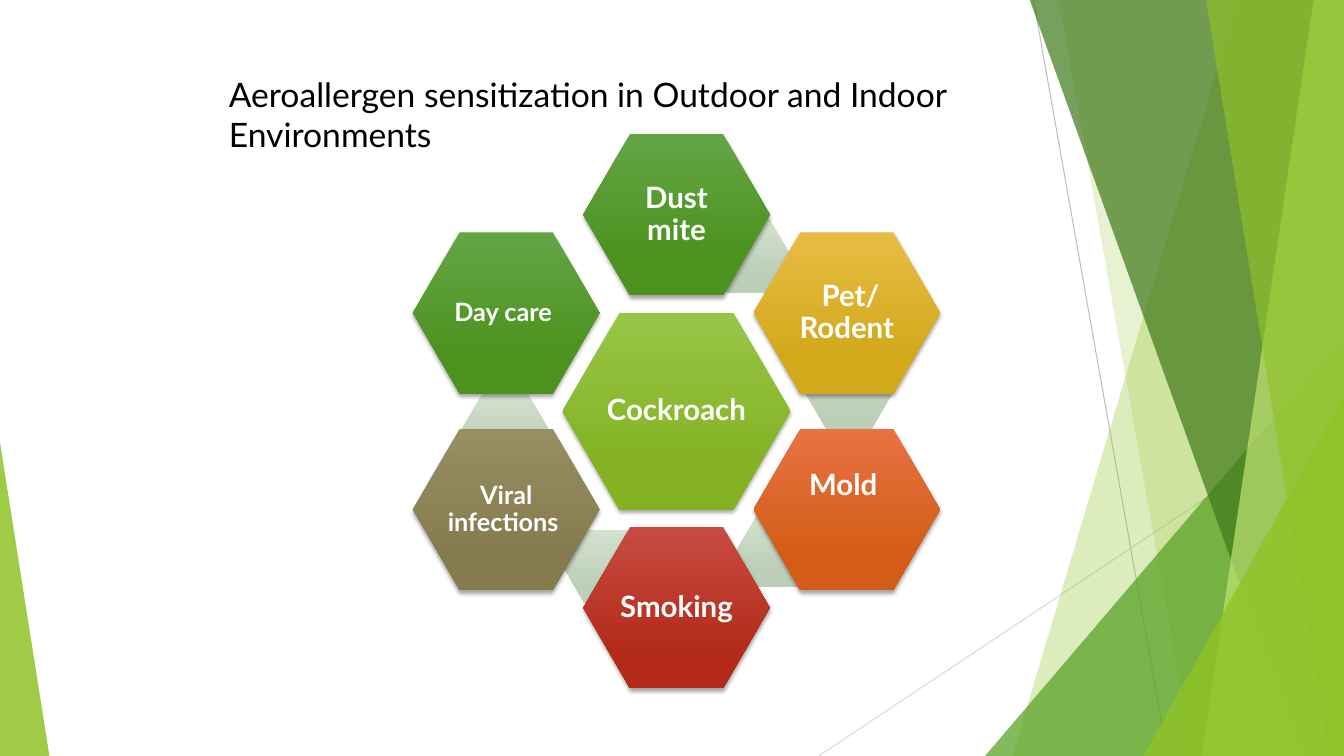
import math

from lxml import etree
from pptx import Presentation
from pptx import util as u
from pptx.dml.color import RGBColor
from pptx.enum import shapes, text
from pptx.oxml.ns import qn

Inches = u.Inches

WHITE = RGBColor(0xFF, 0xFF, 0xFF)
BLACK = RGBColor(0, 0, 0)
GREY = RGBColor(0xBF, 0xBF, 0xBF)
PALE_GREY = RGBColor(0xD9, 0xD9, 0xD9)
LIME = RGBColor(0x90, 0xC2, 0x26)
PALE_LIME = RGBColor(0xC0, 0xE4, 0x74)
GREEN = RGBColor(0x54, 0xA0, 0x21)
DARK_GREEN = RGBColor(0x3F, 0x78, 0x19)

# Gradients: top colour, bottom colour
LIME_BLEND = RGBColor(0x97, 0xC5, 0x47), RGBColor(0x84, 0xB2, 0x23)
GREEN_BLEND = RGBColor(0x63, 0xA5, 0x45), RGBColor(0x4D, 0x92, 0x1E)
GOLD_BLEND = RGBColor(0xE7, 0xBC, 0x43), RGBColor(0xD2, 0xA9, 0x1B)
ORANGE_BLEND = RGBColor(0xE8, 0x72, 0x42), RGBColor(0xD3, 0x5D, 0x16)
RED_BLEND = RGBColor(0xC7, 0x4B, 0x42), RGBColor(0xB3, 0x2B, 0x18)
OLIVE_BLEND = RGBColor(0x98, 0x8E, 0x64), RGBColor(0x85, 0x7B, 0x4E)
LINK_BLEND = RGBColor(0xD3, 0xE1, 0xCF), RGBColor(0xBD, 0xCF, 0xB8)


class SlideBuilder:
    font_name = "Lato"

    def __init__(self, page):
        self.page = page

    def title(self, words, left, top, width, height):
        box = self.page.shapes.title
        box.left, box.top = Inches(left), Inches(top)
        box.width, box.height = Inches(width), Inches(height)
        frame = box.text_frame
        frame.text = words
        frame.word_wrap = True
        frame.auto_size = text.MSO_AUTO_SIZE.NONE
        frame.vertical_anchor = text.MSO_ANCHOR.TOP
        para = frame.paragraphs[0]
        para.alignment = text.PP_ALIGN.LEFT
        self.set_font(para, 24, BLACK)

    def set_font(self, para, size, color, bold=False):
        font = para.font
        font.name, font.size, font.bold = self.font_name, u.Pt(size), bold
        font.color.rgb = color

    def line(self, start, end, color):
        line = self.page.shapes.add_connector(
            shapes.MSO_CONNECTOR.STRAIGHT, *map(Inches, start + end))
        line.line.color.rgb = color
        line.line.width = u.Pt(0.75)
        etree.SubElement(line._element.spPr, qn("a:effectLst"))

    def tint(self, shape, color, opacity):
        shape.shadow.inherit = False
        shape.line.fill.background()
        shape.fill.solid()
        shape.fill.fore_color.rgb = color
        tone = shape._element.spPr.find(qn("a:solidFill"))[0]
        etree.SubElement(tone, qn("a:alpha"), val=str(opacity * 1000))

    def band(self, top_left, top_right, bottom_right, bottom_left, color, opacity):
        """Translucent band running the full height of the page."""
        top, bottom = Inches(-0.01), Inches(7.5)
        outline = self.page.shapes.build_freeform(Inches(top_left), top)
        outline.add_line_segments([
            (Inches(top_right), top),
            (Inches(bottom_right), bottom),
            (Inches(bottom_left), bottom),
        ])
        self.tint(outline.convert_to_shape(), color, opacity)

    def triangle(self, left, top, width, height, apex, color, opacity):
        shape = self.page.shapes.add_shape(
            shapes.MSO_SHAPE.ISOSCELES_TRIANGLE,
            *map(Inches, (left, top, width, height)))
        shape.adjustments[0] = apex
        self.tint(shape, color, opacity)

    def hexagon(self, center, width, height, blend):
        x, y = center
        shape = self.page.shapes.add_shape(
            shapes.MSO_SHAPE.HEXAGON, Inches(x - width / 2),
            Inches(y - height / 2), Inches(width), Inches(height))
        shape.adjustments[0] = 0.29
        shape.shadow.inherit = False
        shape.line.fill.background()
        shape.fill.gradient()
        shape.fill.gradient_angle = 270
        for stop, color, position in zip(shape.fill.gradient_stops, blend, (0, 0.78)):
            stop.color.rgb = color
            stop.position = position
        return shape

    def label_hexagon(self, words, center, width, height, blend, size=21, lift=0):
        """Hexagon with a soft shadow; lift is extra room below the text."""
        shape = self.hexagon(center, width, height, blend)
        effects = shape._element.spPr.find(qn("a:effectLst"))
        shadow = etree.SubElement(
            effects, qn("a:outerShdw"), blurRad=str(u.Pt(3)), dist=str(u.Pt(2)),
            dir="5400000", rotWithShape="0")
        tone = etree.SubElement(shadow, qn("a:srgbClr"), val="000000")
        etree.SubElement(tone, qn("a:alpha"), val="35000")

        frame = shape.text_frame
        frame.text = words
        frame.word_wrap = True
        frame.vertical_anchor = text.MSO_ANCHOR.MIDDLE
        frame.margin_left = frame.margin_right = frame.margin_top = Inches(0.03)
        frame.margin_bottom = Inches(0.03 + lift)
        para = frame.paragraphs[0]
        para.alignment = text.PP_ALIGN.CENTER
        para.line_spacing = 0.9
        self.set_font(para, size, WHITE, bold=True)


def main():
    deck = Presentation()
    deck.slide_width, deck.slide_height = Inches(13.33), Inches(7.5)
    builder = SlideBuilder(deck.slides.add_slide(deck.slide_layouts[5]))

    # Background decoration
    builder.line((10.25, 0), (11.58, 7.5), GREY)
    builder.line((13.33, 4.03), (8.12, 7.5), PALE_GREY)
    builder.band(12.28, 13.33, 13.33, 10.04, LIME, 30)
    builder.band(10.5, 13.33, 13.33, 11.83, LIME, 20)
    builder.triangle(9.77, 3.33, 3.56, 4.17, 1, GREEN, 72)
    builder.band(10.21, 13.33, 13.33, 12.91, DARK_GREEN, 70)
    builder.band(13.03, 13.33, 13.33, 11.92, PALE_LIME, 70)
    builder.band(11.96, 13.33, 13.33, 13.18, LIME, 65)
    builder.triangle(11.34, 3.93, 1.99, 3.57, 1, LIME, 80)
    builder.triangle(0, 4.39, 0.49, 3.11, 0, LIME, 85)

    # Title
    builder.title("Aeroallergen sensitization in Outdoor and Indoor Environments",
                  2.17, 0.68, 9, 0.5)

    # Hub
    hub_x, hub_y, radius = 6.71, 4.08, 1.95
    builder.label_hexagon("Cockroach", (hub_x, hub_y), 2.26, 1.95, LIME_BLEND)

    # Ring, clockwise from the top: label, gradient, text size, lift, link centre
    ring = [
        ("Dust mite", GREEN_BLEND, 21, 0, (7.42, 2.54)),
        (" Pet/ Rodent", GOLD_BLEND, 21, 0, (8.42, 3.91)),
        ("Mold ", ORANGE_BLEND, 21, 0.46, (7.73, 5.46)),
        ("Smoking", RED_BLEND, 21, 0, (6.01, 5.62)),
        ("Viral infections ", OLIVE_BLEND, 18, 0, (5.01, 4.25)),
        ("Day care ", GREEN_BLEND, 18, 0, None),
    ]
    for index, (words, blend, size, lift, link_center) in enumerate(ring):
        if link_center:
            builder.hexagon(link_center, 0.85, 0.73, LINK_BLEND)
        angle = math.radians(60 * index)
        center = (hub_x + radius * math.sin(angle), hub_y - radius * math.cos(angle))
        builder.label_hexagon(words, center, 1.85, 1.6, blend, size, lift)

    deck.save("out.pptx")


if __name__ == "__main__":
    main()
